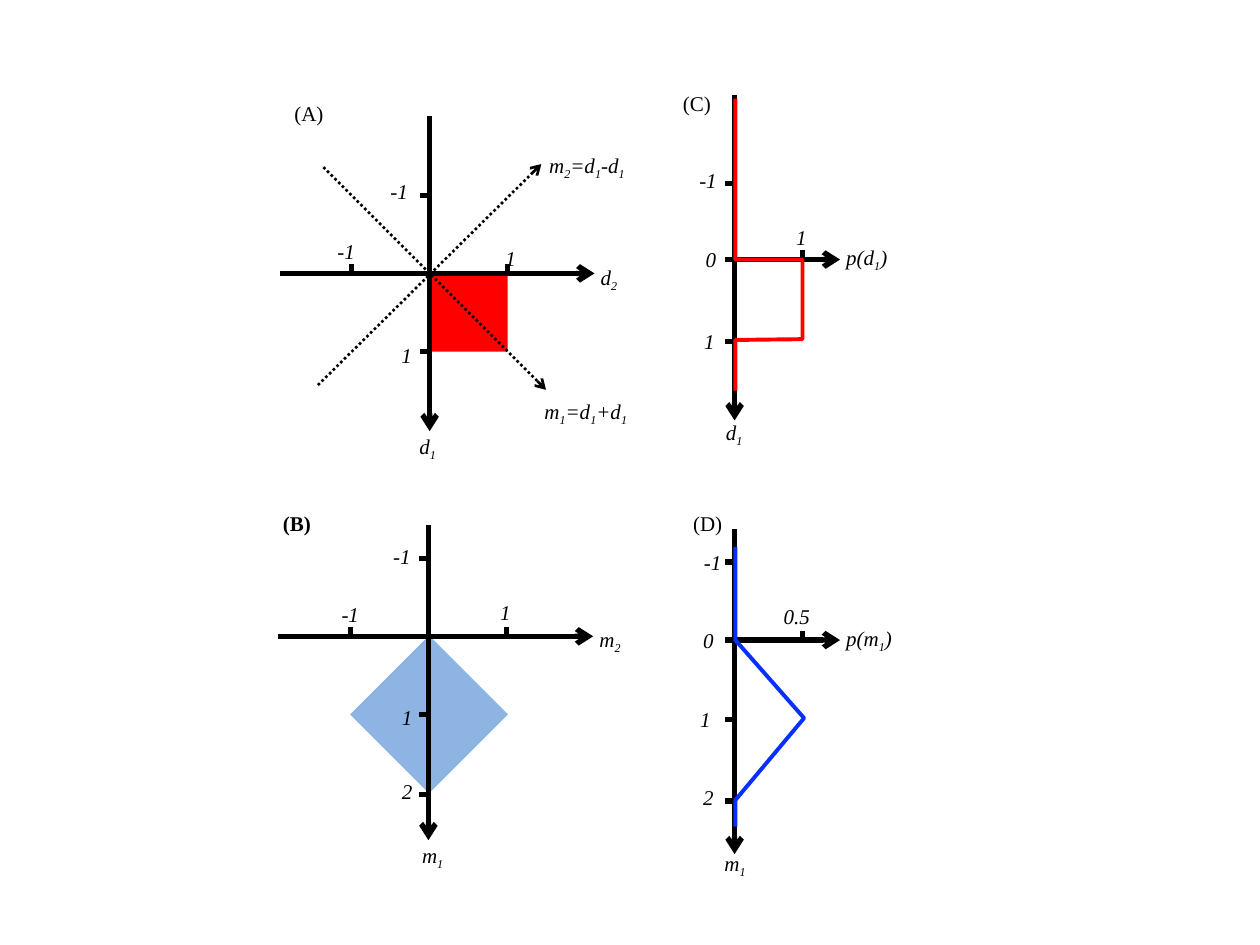
import lxml.etree
import pptx
import pptx.dml.color
import pptx.enum.dml
import pptx.enum.shapes
import pptx.oxml.ns
import pptx.util

UNIT = 0.62  # inches per grid step in every panel
FONT = "Times New Roman"
BLACK = "000000"
RED = "FF0000"
BLUE = "0730FF"
PALE = "8EB4E3"


def color(code):
    return pptx.dml.color.RGBColor.from_string(code)


def add_node(parent, tag, **attrs):
    lxml.etree.SubElement(parent, pptx.oxml.ns.qn(tag), attrs)


class Panel:
    """Draws on a slide in grid steps counted from an origin in inches."""

    def __init__(self, slide, left, top):
        self.shapes = slide.shapes
        self.left, self.top = left, top

    def point(self, col, row):
        return (pptx.util.Inches(self.left + col * UNIT),
                pptx.util.Inches(self.top + row * UNIT))

    def line(self, start, end, width=3, arrow=False, dotted=False):
        line = self.shapes.add_connector(
            pptx.enum.shapes.MSO_CONNECTOR.STRAIGHT,
            *self.point(*start), *self.point(*end))
        line.line.color.rgb = color(BLACK)
        line.line.width = pptx.util.Pt(width)
        if dotted:
            line.line.dash_style = pptx.enum.dml.MSO_LINE.ROUND_DOT
        if arrow:
            add_node(line.line._get_or_add_ln(), "a:tailEnd", type="arrow")
        add_node(line._element.spPr, "a:effectLst")

    def axes(self, across, down, cols, rows):
        """Two arrows through the origin, with ticks above and to the left."""
        self.line((across[0], 0), (across[1], 0), arrow=True)
        self.line((0, down[0]), (0, down[1]), arrow=True)
        for col in cols:
            self.line((col, -0.12), (col, -0.02))
        for row in rows:
            self.line((-0.02, row), (-0.12, row))

    def square(self, center, side, fill, angle=0):
        col, row = center
        size = pptx.util.Inches(side * UNIT)
        box = self.shapes.add_shape(
            pptx.enum.shapes.MSO_SHAPE.RECTANGLE,
            *self.point(col - side / 2, row - side / 2), size, size)
        box.rotation = angle
        box.fill.solid()
        box.fill.fore_color.rgb = color(fill)
        box.line.fill.background()
        box.shadow.inherit = False

    def curve(self, spots, code):
        first, *rest = [self.point(*spot) for spot in spots]
        pen = self.shapes.build_freeform(*first)
        pen.add_line_segments(rest, close=False)
        shape = pen.convert_to_shape()
        shape.fill.background()
        shape.line.color.rgb = color(code)
        shape.line.width = pptx.util.Pt(2.25)
        shape.shadow.inherit = False

    def label(self, text, col, row, width=0.31, italic=True, bold=False):
        """Writes text; the character after each underscore is a subscript."""
        height = 0.23 if len(text) == 1 else 0.3
        box = self.shapes.add_textbox(
            *self.point(col, row), pptx.util.Inches(width), pptx.util.Inches(height))
        frame = box.text_frame
        frame.word_wrap = True
        par = frame.paragraphs[0]
        par.font.name = FONT
        par.font.size = pptx.util.Pt(12)
        par.font.italic = italic
        par.font.bold = bold
        par.font.color.rgb = color(BLACK)
        head, *tails = text.split("_")
        par.add_run().text = head
        for tail in tails:
            sub = par.add_run()
            sub.text = tail[0]
            sub._r.get_or_add_rPr().set("baseline", "-25000")
            if tail[1:]:
                par.add_run().text = tail[1:]

    def labels(self, *items):
        for item in items:
            self.label(*item)


def draw_inputs(slide):
    panel = Panel(slide, 3.41, 2.17)
    panel.square((0.5, 0.5), 1, RED)
    panel.axes((-1.92, 2.11), (-2.02, 2.02), (-1, 1), (-1, 1))
    panel.line((-1.36, -1.36), (1.49, 1.49), 1.5, arrow=True, dotted=True)
    panel.line((-1.43, 1.43), (1.43, -1.4), 1.5, arrow=True, dotted=True)
    panel.label("(A)", -1.89, -2.29, 0.67, italic=False)
    panel.labels(
        ("d_2", 2.03, -0.19, 0.57), ("d_1", -0.29, 1.97, 0.55),
        ("-1", -1.34, -0.53, 0.59), ("1", 0.81, -0.44),
        ("-1", -0.66, -1.29, 0.5), ("1", -0.52, 0.81),
        ("m_1=d_1+d_1", 1.31, 1.52, 1.1), ("m_2=d_1-d_1", 1.37, -1.63, 1.25))


def draw_turned(slide):
    panel = Panel(slide, 3.4, 5.05)
    panel.square((0.01, 1), 1.43, PALE, angle=315)
    panel.axes((-1.92, 2.11), (-1.42, 2.61), (-1, 1), (-1, 1, 2.03))
    panel.label("(B)", -2.02, -1.69, 0.67, italic=False, bold=True)
    panel.labels(
        ("m_2", 2.03, -0.21, 0.49), ("m_1", -0.24, 2.56, 0.45),
        ("-1", -1.27, -0.53, 0.4), ("1", 0.76, -0.55),
        ("-1", -0.61, -1.27, 0.54), ("1", -0.5, 0.79), ("2", -0.5, 1.74))


def draw_box(slide):
    """Density of d1."""
    panel = Panel(slide, 5.83, 2.06)
    panel.axes((0, 1.35), (-2.11, 2.06), (0.87,), (-0.97, 0, 1.05))
    panel.curve([(0.01, -2.06), (0.01, 0), (0.87, 0),
                 (0.87, 1.02), (0.01, 1.03), (0.01, 1.68)], RED)
    panel.label("(C)", -0.82, -2.24, 0.58, italic=False)
    panel.labels(
        ("p(d_1)", 1.27, -0.27, 0.71), ("d_1", -0.27, 1.97, 0.46),
        ("1", 0.63, -0.53), ("-1", -0.61, -1.26, 0.57),
        ("0", -0.53, -0.24), ("1", -0.55, 0.81))


def draw_peak(slide):
    """Density of m1."""
    panel = Panel(slide, 5.83, 5.08)
    panel.axes((0, 1.35), (-1.42, 2.74), (0.87,), (-1, 0, 1.02, 2.06))
    panel.curve([(0.01, -1.19), (0.01, 0), (0.89, 1),
                 (0.01, 2.05), (0.01, 2.39)], BLUE)
    panel.label("(D)", -0.69, -1.74, 0.75, italic=False)
    panel.labels(
        ("p(m_1)", 1.27, -0.27, 0.71), ("m_1", -0.29, 2.61, 0.45),
        ("0.5", 0.47, -0.55, 0.6), ("-1", -0.55, -1.24, 0.5),
        ("0", -0.56, -0.24), ("1", -0.6, 0.77), ("2", -0.56, 1.77))


def main():
    deck = pptx.Presentation()
    deck.slide_width = pptx.util.Inches(10)
    deck.slide_height = pptx.util.Inches(7.5)
    slide = deck.slides.add_slide(deck.slide_layouts[6])
    for draw in (draw_inputs, draw_turned, draw_box, draw_peak):
        draw(slide)
    deck.save("out.pptx")


if __name__ == "__main__":
    main()
